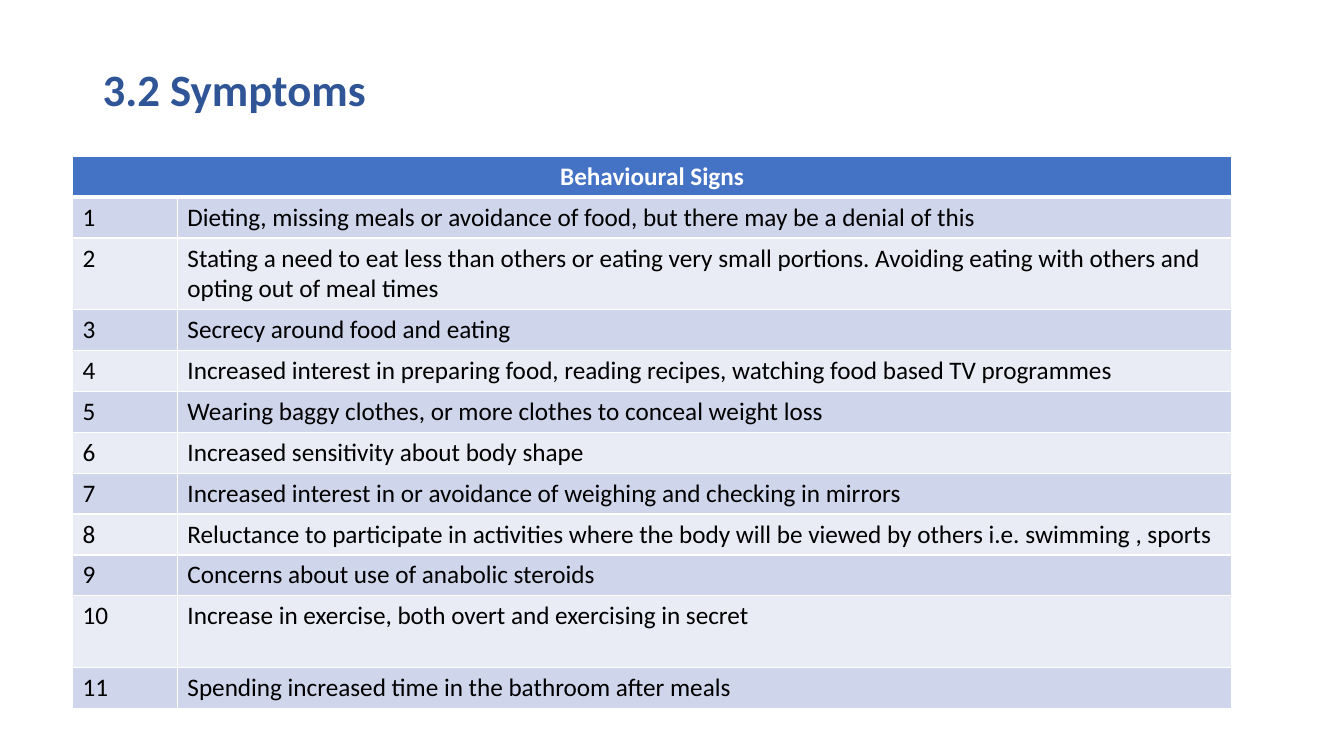
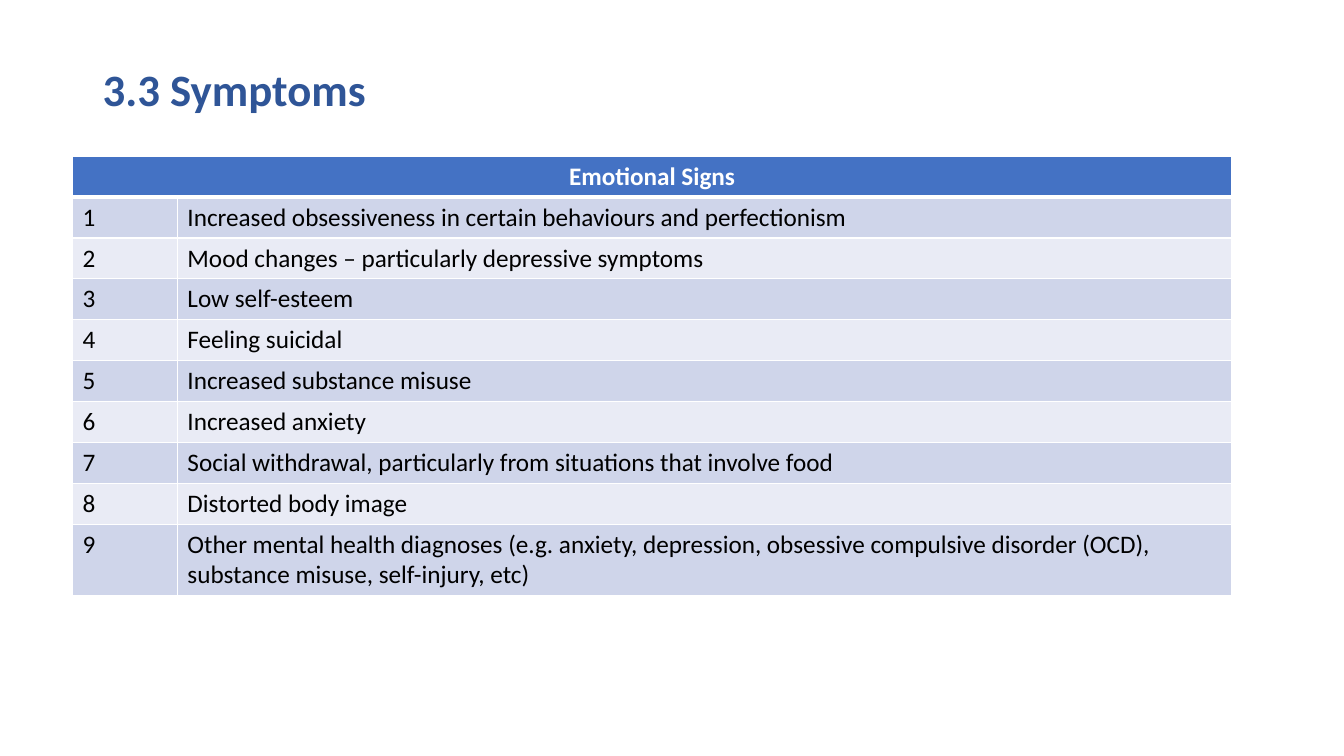
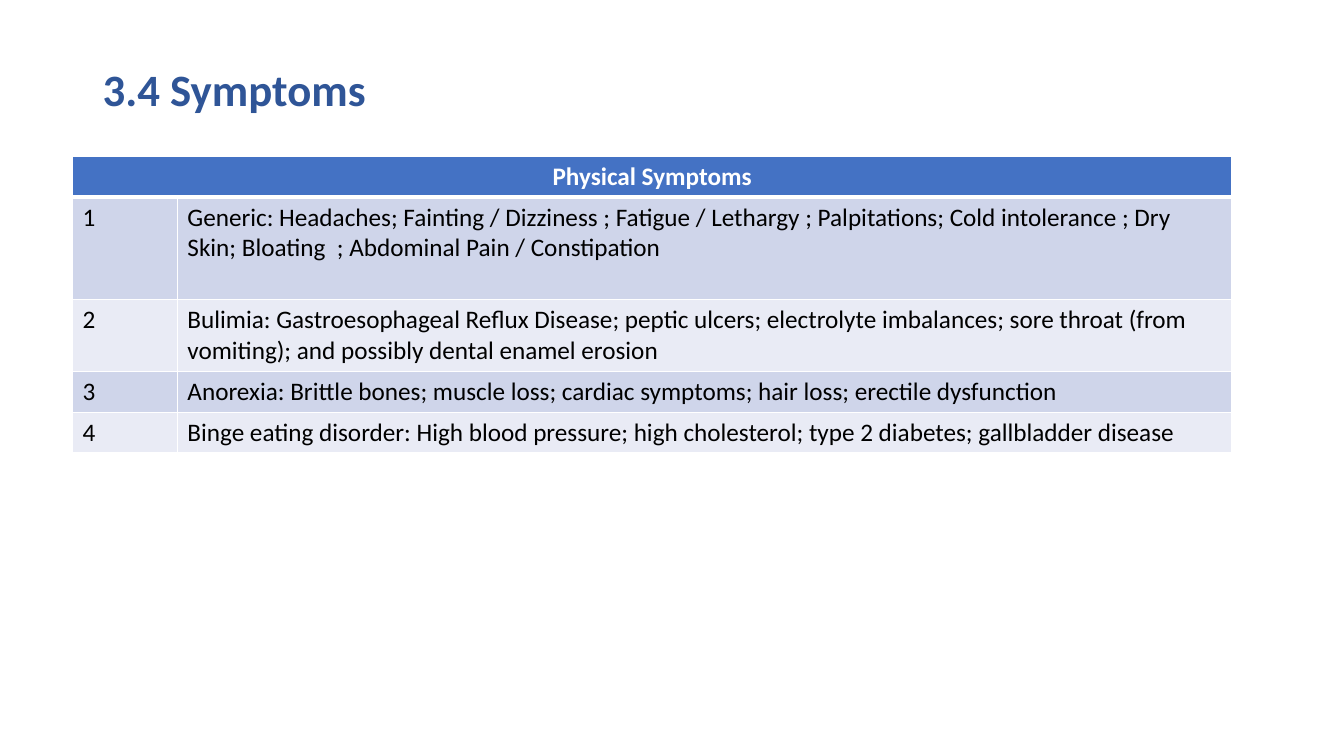
from lxml import etree
from pptx import Presentation
from pptx.dml.color import RGBColor
from pptx.enum.text import MSO_ANCHOR, PP_ALIGN
from pptx.oxml.ns import qn
from pptx.util import Pt

# Style constants
NAVY = RGBColor(0x2F, 0x55, 0x97)
BLUE = RGBColor(0x44, 0x72, 0xC4)
BANDS = (RGBColor(0xCF, 0xD5, 0xEA), RGBColor(0xE9, 0xEB, 0xF5))
WHITE = RGBColor(0xFF, 0xFF, 0xFF)
BLACK = RGBColor(0, 0, 0)
FONT = "Calibri"
MIDDLE = MSO_ANCHOR.MIDDLE
LEFT, CENTER = PP_ALIGN.LEFT, PP_ALIGN.CENTER

# Table measures in points
COLS = (74.88, 753.12)
WIDTH = sum(COLS)
LINE, PAD = 22, 7.2
THIN, THICK = 1, 3

# Slide content: title, heading, signs, and the lines of any taller row
SLIDES = [
    ("3.2 Symptoms", "Behavioural Signs", [
        "Dieting, missing meals or avoidance of food, but there may be a denial of this",
        "Stating a need to eat less than others or eating very small portions. "
        "Avoiding eating with others and opting out of meal times",
        "Secrecy around food and eating",
        "Increased interest in preparing food, reading recipes, watching food based TV programmes",
        "Wearing baggy clothes, or more clothes to conceal weight loss",
        "Increased sensitivity about body shape",
        "Increased interest in or avoidance of weighing and checking in mirrors",
        "Reluctance to participate in activities where the body will be viewed by others "
        "i.e. swimming , sports",
        "Concerns about use of anabolic steroids",
        "Increase in exercise, both overt and exercising in secret",
        "Spending increased time in the bathroom after meals",
    ], {2: 2, 10: 2}),
    ("3.3 Symptoms", "Emotional Signs", [
        "Increased obsessiveness in certain behaviours and perfectionism",
        "Mood changes – particularly depressive symptoms",
        "Low self-esteem",
        "Feeling suicidal",
        "Increased substance misuse",
        "Increased anxiety",
        "Social withdrawal, particularly from situations that involve food",
        "Distorted body image",
        "Other mental health diagnoses (e.g. anxiety, depression, obsessive compulsive "
        "disorder (OCD), substance misuse, self-injury, etc)",
    ], {9: 2}),
    ("3.4 Symptoms", "Physical Symptoms", [
        "Generic: Headaches; Fainting / Dizziness ; Fatigue / Lethargy ; Palpitations; "
        "Cold intolerance ; Dry Skin; Bloating  ; Abdominal Pain / Constipation",
        "Bulimia: Gastroesophageal Reflux Disease; peptic ulcers; electrolyte imbalances; "
        "sore throat (from vomiting); and possibly dental enamel erosion",
        "Anorexia: Brittle bones; muscle loss; cardiac symptoms; hair loss; erectile dysfunction",
        "Binge eating disorder: High blood pressure; high cholesterol; type 2 diabetes; "
        "gallbladder disease",
    ], {1: 3, 2: 2}),
]


class Deck:
    """Holds the shared style and the current slide."""

    def __init__(self):
        self.prs = Presentation()
        self.prs.slide_width = Pt(960)
        self.prs.slide_height = Pt(540)
        self.slide = None

    def page(self):
        self.slide = self.prs.slides.add_slide(self.prs.slide_layouts[6])

    def words(self, para, text, size, color, bold=False):
        run = para.add_run()
        run.text = text
        font = run.font
        font.name, font.size, font.bold = FONT, Pt(size), bold
        font.color.rgb = color

    def title(self, text):
        box = self.slide.shapes.add_textbox(Pt(66.24), Pt(28.8), Pt(WIDTH), Pt(74.16))
        frame = box.text_frame
        frame.word_wrap = True
        frame.vertical_anchor = MIDDLE
        para = frame.paragraphs[0]
        para.line_spacing = 0.9
        self.words(para, text, 32, NAVY, True)

    def edges(self, cell, top, bottom):
        props = cell._tc.get_or_add_tcPr()
        for tag, width in (("lnL", THIN), ("lnR", THIN), ("lnT", top), ("lnB", bottom)):
            line = etree.SubElement(props, qn("a:" + tag), w=str(Pt(width)))
            fill = etree.SubElement(line, qn("a:solidFill"))
            etree.SubElement(fill, qn("a:srgbClr"), val=str(WHITE))

    def cell(self, cell, text, fill, color=BLACK, bold=False, align=LEFT,
             top=THIN, bottom=THIN):
        self.edges(cell, top, bottom)
        cell.fill.solid()
        cell.fill.fore_color.rgb = fill
        para = cell.text_frame.paragraphs[0]
        para.alignment = align
        if text:
            self.words(para, text, 18, color, bold)

    def table(self, head, signs, lines):
        tall = [PAD + LINE * lines.get(num, 1) for num in range(len(signs) + 1)]
        grid = self.slide.shapes.add_table(
            len(tall), len(COLS), Pt(51.84), Pt(111.6), Pt(WIDTH), Pt(sum(tall))).table
        for col, width in zip(grid.columns, COLS):
            col.width = Pt(width)
        for row, height in zip(grid.rows, tall):
            row.height = Pt(height)

        # Heading across both columns
        grid.cell(0, 0).merge(grid.cell(0, 1))
        for col, text in enumerate((head, "")):
            self.cell(grid.cell(0, col), text, BLUE, WHITE, True, CENTER, bottom=THICK)

        # Numbered signs in alternating bands
        for num, sign in enumerate(signs, 1):
            for col, text in enumerate((str(num), sign)):
                self.cell(grid.cell(num, col), text, BANDS[(num - 1) % 2],
                          top=THICK if num == 1 else THIN)


def main():
    deck = Deck()
    for title, head, signs, lines in SLIDES:
        deck.page()
        deck.title(title)
        deck.table(head, signs, lines)
    deck.prs.save("out.pptx")


if __name__ == "__main__":
    main()
